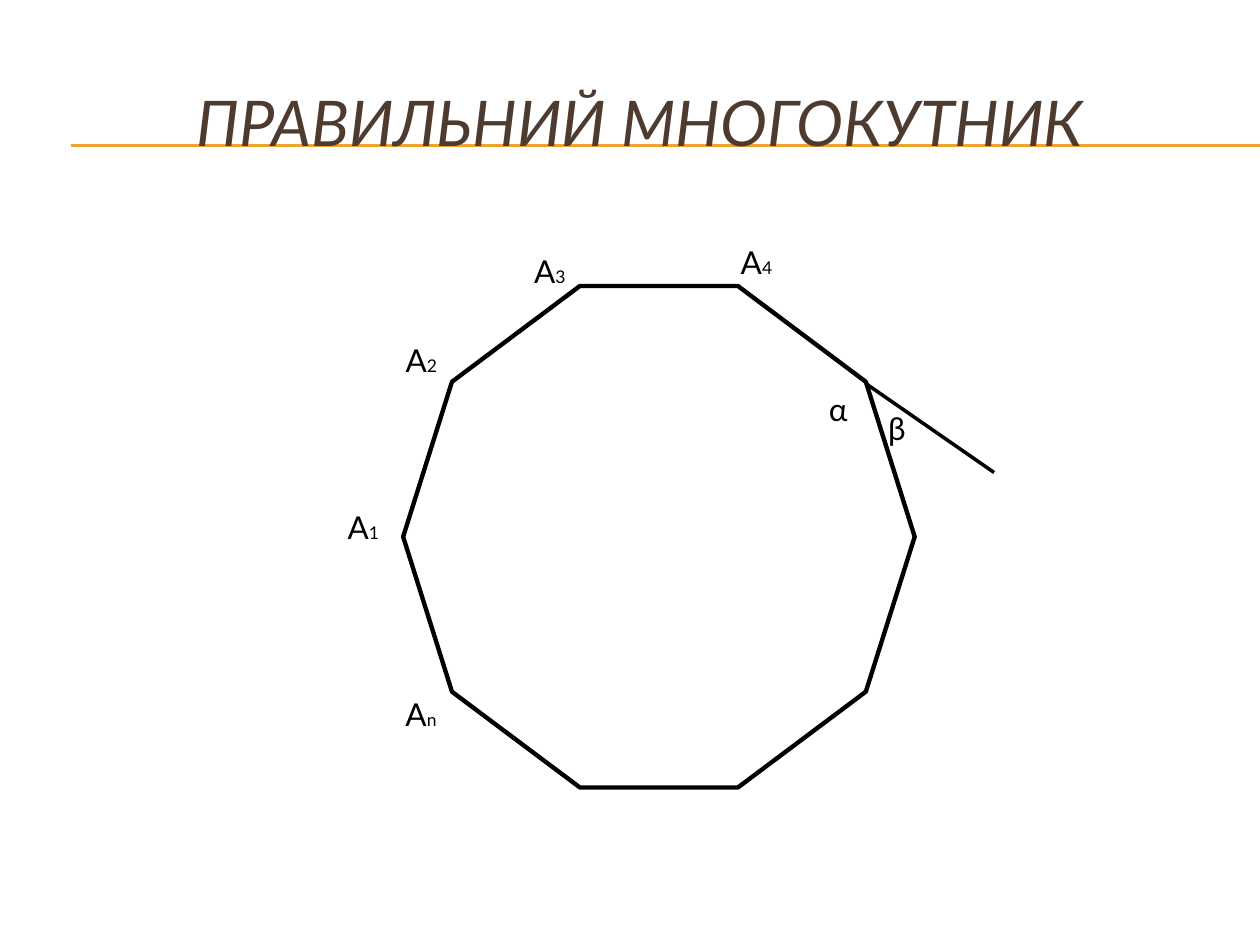
from pptx import Presentation
from pptx.dml.color import RGBColor
from pptx.enum.shapes import MSO_CONNECTOR, MSO_SHAPE
from pptx.enum.text import MSO_ANCHOR, MSO_AUTO_SIZE, PP_ALIGN
from pptx.oxml.ns import qn
from pptx.util import Inches, Pt
from lxml import etree

STRAIGHT, DECAGON = MSO_CONNECTOR.STRAIGHT, MSO_SHAPE.DECAGON
MIDDLE, CENTER = MSO_ANCHOR.MIDDLE, PP_ALIGN.CENTER
GROW = MSO_AUTO_SIZE.SHAPE_TO_FIT_TEXT
FONT, BLACK, BROWN, GOLD = "Lato", "000000", "4E3B30", "F0A22E"
WIDTH, HEIGHT = 10, 7.5
LABELS = [
    ("А", "1", -0.54, 1.71, 0.55),
    ("А", "2", -0.08, 0.39, 0.55),
    ("А", "3", 0.94, -0.32, 0.55),
    ("A", "n", -0.08, 3.2, 0.47),
    ("A", "4", 2.58, -0.39, 0.55),
    ("α", "", 3.28, 0.78, 0.39),
    ("β", "", 3.75, 0.93, 0.47),
]


def rgb(color):
    """Turn a hex string into a colour."""
    return RGBColor.from_string(color)


def add_line(s, x1, y1, x2, y2, color, width):
    """Draw a straight line without shadow."""
    line = s.shapes.add_connector(STRAIGHT, *map(Inches, (x1, y1, x2, y2)))
    line.line.color.rgb = rgb(color)
    line.line.width = Pt(width)
    etree.SubElement(line._element.spPr, qn("a:effectLst"))


def add_label(s, x, y, w, letter, index):
    """Write a letter with a small index after it."""
    tb = s.shapes.add_textbox(*map(Inches, (x, y, w, 0.4)))
    tf = tb.text_frame
    tf.word_wrap = True
    tf.auto_size = GROW
    p = tf.paragraphs[0]
    p.font.name = FONT
    p.font.color.rgb = rgb(BLACK)
    for text, size in ((letter, 18), (index, 10)):
        if text:
            r = p.add_run()
            r.text = text
            r.font.size = Pt(size)


def add_heading(s, x, y, w, h):
    """Place the title over its double rule."""
    for rule_y in (1.15, 1.16):
        add_line(s, 0.56, rule_y, WIDTH, rule_y, GOLD, 0.75)
    title = s.shapes.title
    title.left, title.top, title.width, title.height = map(Inches, (x, y, w, h))
    s.shapes._spTree.append(title._element)
    tf = title.text_frame
    tf.text = "ПРАВИЛЬНИЙ МНОГОКУТНИК"
    tf.vertical_anchor = MIDDLE
    p = tf.paragraphs[0]
    p.alignment = CENTER
    p.font.name = FONT
    p.font.size = Pt(36)
    p.font.italic = True
    p.font.color.rgb = rgb(BROWN)


def add_polygon(s, x, y, w, h):
    """Draw the decagon, one extended side and the labels around it."""
    polygon = s.shapes.add_shape(DECAGON, *map(Inches, (x, y, w, h)))
    polygon.shadow.inherit = False
    polygon.fill.background()
    polygon.line.color.rgb = rgb(BLACK)
    polygon.line.width = Pt(2.5)
    add_line(s, x + 3.68, y + 0.78, x + 4.69, y + 1.48, BLACK, 2)
    for letter, index, dx, dy, label_w in LABELS:
        add_label(s, x + dx, y + dy, label_w, letter, index)


def main():
    """Build and save the slide."""
    prs = Presentation()
    prs.slide_width, prs.slide_height = Inches(WIDTH), Inches(HEIGHT)
    s = prs.slides.add_slide(prs.slide_layouts[5])
    add_heading(s, 0.33, 0.5, 9.5, 0.92)
    add_polygon(s, 3.2, 2.27, 4.06, 3.98)
    prs.save("out.pptx")


if __name__ == "__main__":
    main()
